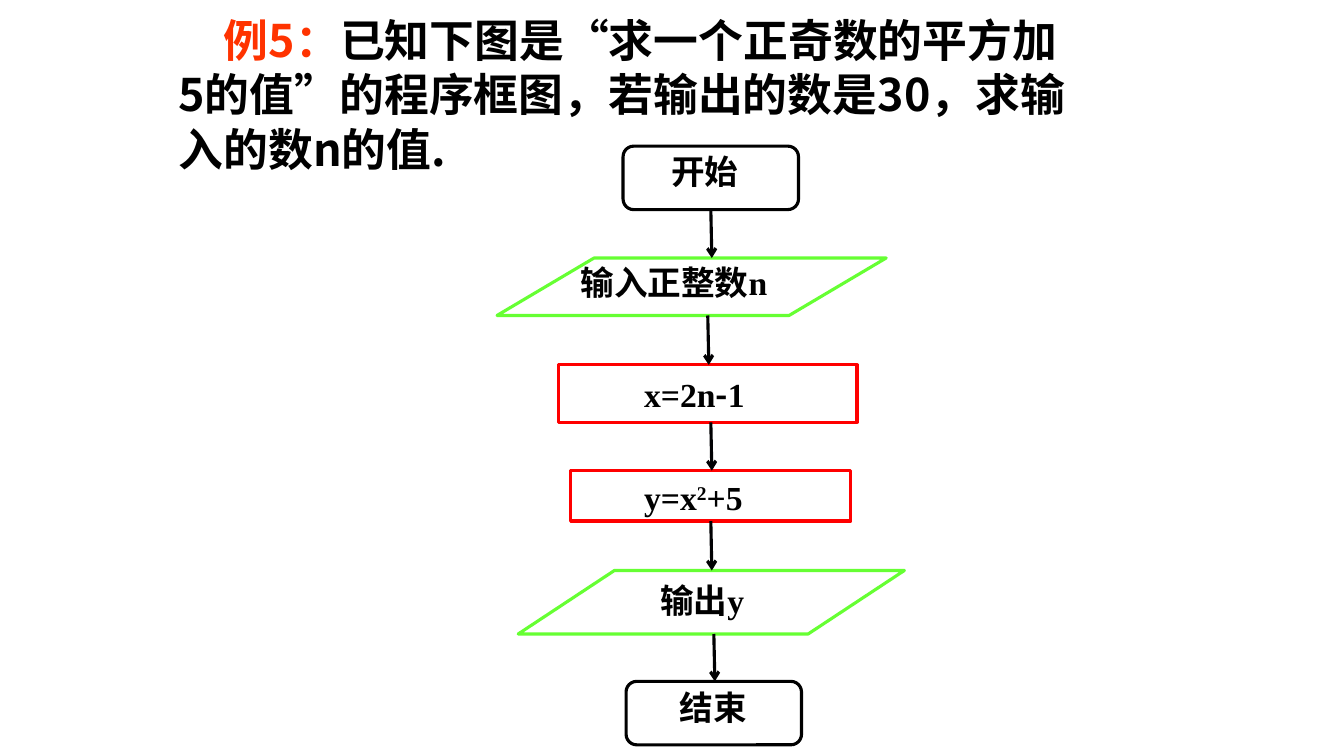
from pptx import Presentation
from pptx import util as u
from pptx.dml.color import RGBColor
from pptx.enum import shapes, text
from pptx.oxml.ns import qn
from lxml import etree

SANS, SERIF = "Noto Sans CJK SC", "Times New Roman"
BLACK, ORANGE, GREEN, RED, ARROW = "000000", "FF3300", "66FF33", "FF0000", "010103"
PRESET = shapes.MSO_SHAPE
TERMINAL = (PRESET.ROUNDED_RECTANGLE, 0.167, BLACK)
PROCESS = (PRESET.RECTANGLE, None, RED)

# Each step: kind, box, label parts, label box, x of the arrow that leaves it
STEPS = [
    (TERMINAL, (6.18, 1.45, 1.74, 0.63), ["开始"], (6.56, 1.45, 1.3), 7.05),
    ((PRESET.PARALLELOGRAM, 1.689, GREEN), (4.93, 2.56, 3.86, 0.57),
     ["输入正整数n"], (5.66, 2.55, 2.68), 7.02),
    (PROCESS, (5.54, 3.62, 2.96, 0.57),
     ["x=2n", ("-", {"name": SANS}), "1"], (6.29, 3.66, 1.73), 7.05),
    (PROCESS, (5.66, 4.67, 2.78, 0.5),
     ["y=x", ("2", {"baseline": 30000}), "+5"], (6.29, 4.68, 1.89), 7.05),
    ((PRESET.PARALLELOGRAM, 1.515, GREEN), (5.14, 5.66, 3.83, 0.63),
     ["输出y"], (6.45, 5.7, 1.71), 7.08),
    (TERMINAL, (6.21, 6.76, 1.74, 0.63), ["结束"], (6.64, 6.77, 1.18), None),
]


def color(hex_value):
    return RGBColor.from_string(hex_value)


def set_attributes(target, values):
    for name, value in values.items():
        setattr(target, name, value)


def add_run(paragraph, words, size, hex_value=BLACK, name=SERIF, baseline=None):
    run = paragraph.add_run()
    run.text = words
    set_attributes(run.font, {"size": u.Pt(size), "bold": True, "name": name})
    run.font.color.rgb = color(hex_value)
    properties = run._r.get_or_add_rPr()
    etree.SubElement(properties, qn("a:ea")).set("typeface", SANS)
    if baseline:
        properties.set("baseline", str(baseline))


def write_question(slide):
    question = slide.shapes.title
    set_attributes(question, {"left": u.Inches(1.67), "top": u.Inches(0),
                              "width": u.Inches(9.17), "height": u.Inches(1.77)})
    set_attributes(question.text_frame, {
        "word_wrap": True, "auto_size": text.MSO_AUTO_SIZE.NONE,
        "vertical_anchor": text.MSO_ANCHOR.TOP, "margin_top": u.Inches(0.12)})
    paragraph = question.text_frame.paragraphs[0]
    set_attributes(paragraph, {"alignment": text.PP_ALIGN.LEFT,
                               "line_spacing": u.Pt(38.8)})
    # First-line indent
    paragraph._p.get_or_add_pPr().set("indent", str(u.Inches(0.45)))
    add_run(paragraph, "例5：", 32, ORANGE, SANS)
    add_run(paragraph, "已知下图是“求一个正奇数的平方加5的值”的程序框图，"
            "若输出的数是30，求输入的数n的值.", 32, name=SANS)


def add_node(slide, kind, box):
    preset, adjustment, outline = kind
    node = slide.shapes.add_shape(preset, *map(u.Inches, box))
    if adjustment is not None:
        node.adjustments[0] = adjustment
    node.shadow.inherit = False
    node.fill.background()
    node.line.color.rgb = color(outline)
    node.line.width = u.Pt(2.25)


def add_label(slide, parts, place):
    label = slide.shapes.add_textbox(*map(u.Inches, (*place, 0.63)))
    label.text_frame.word_wrap = True
    paragraph = label.text_frame.paragraphs[0]
    paragraph.alignment = text.PP_ALIGN.JUSTIFY
    for part in parts:
        words, style = (part, {}) if isinstance(part, str) else part
        add_run(paragraph, words, 24, **style)


def add_arrow(slide, x, top, bottom):
    arrow = slide.shapes.add_connector(
        shapes.MSO_CONNECTOR.STRAIGHT, *map(u.Inches, (x, top, x + 0.01, bottom)))
    arrow.line.color.rgb = color(ARROW)
    arrow.line.width = u.Pt(2.25)
    etree.SubElement(arrow.line._get_or_add_ln(), qn("a:tailEnd")).set("type", "arrow")
    etree.SubElement(arrow._element.spPr, qn("a:effectLst"))


def main():
    deck = Presentation()
    set_attributes(deck, {"slide_width": u.Inches(13.33), "slide_height": u.Inches(7.5)})
    slide = deck.slides.add_slide(deck.slide_layouts[5])
    write_question(slide)

    # Flowchart boxes and their labels
    for kind, box, parts, place, _ in STEPS:
        add_node(slide, kind, box)
        add_label(slide, parts, place)

    # Arrows from the bottom of each box to the top of the next
    for (_, box, _, _, x), (_, next_box, *_) in zip(STEPS, STEPS[1:]):
        add_arrow(slide, x, box[1] + box[3], next_box[1])

    deck.save("out.pptx")


if __name__ == "__main__":
    main()
